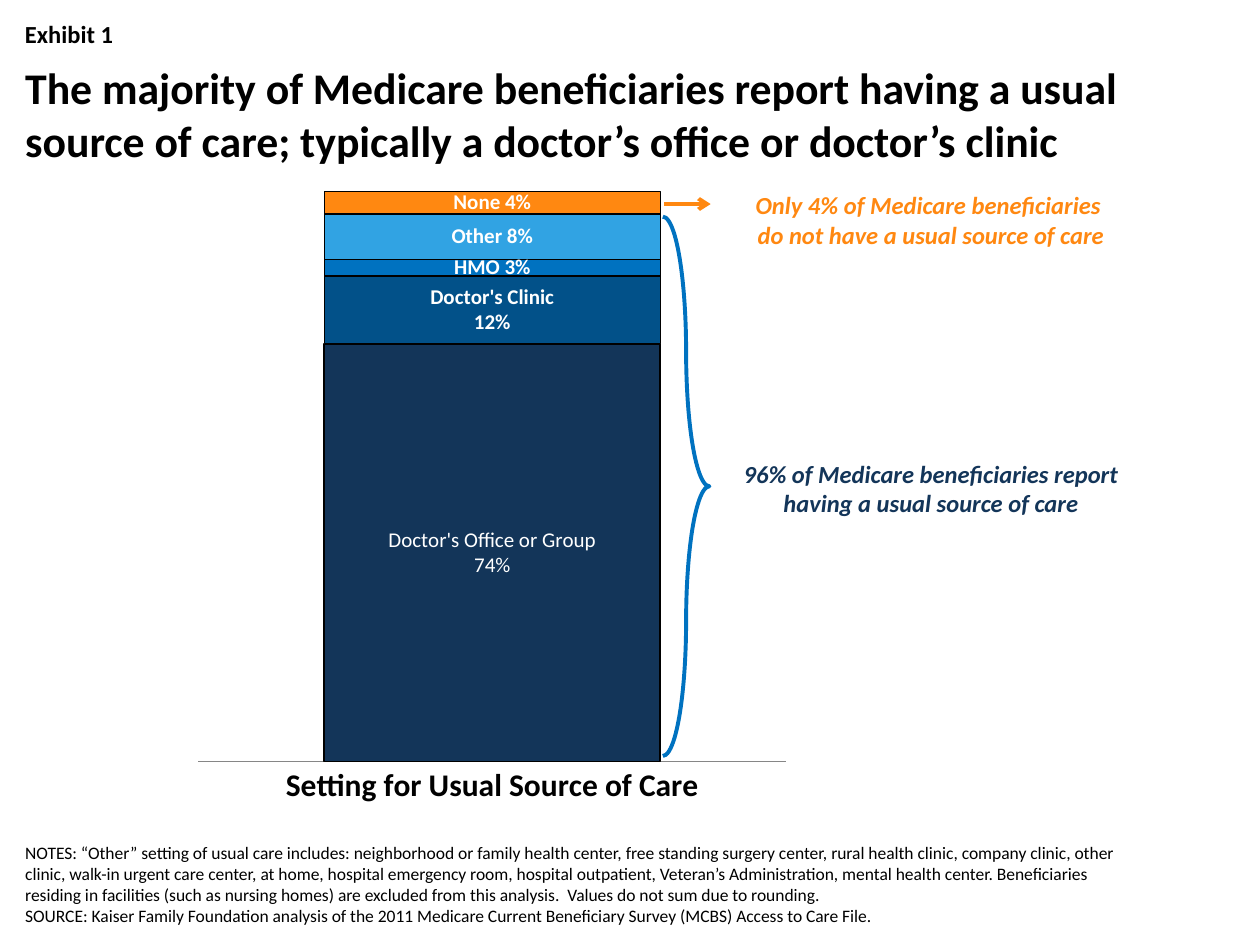
from lxml import etree
from pptx import Presentation
from pptx.chart.data import CategoryChartData
from pptx.dml.color import RGBColor
from pptx.enum.chart import XL_CHART_TYPE, XL_LABEL_POSITION, XL_TICK_MARK
from pptx.enum.shapes import MSO_CONNECTOR, MSO_SHAPE
from pptx.enum.text import MSO_ANCHOR, MSO_AUTO_SIZE, PP_ALIGN
from pptx.oxml import parse_xml
from pptx.oxml.ns import nsdecls, qn
from pptx.util import Pt

STACKED = XL_CHART_TYPE.COLUMN_STACKED_100
LABEL_CENTER = XL_LABEL_POSITION.CENTER
NO_TICK = XL_TICK_MARK.NONE
STRAIGHT = MSO_CONNECTOR.STRAIGHT
BRACE = MSO_SHAPE.RIGHT_BRACE
TOP, MIDDLE, BOTTOM = MSO_ANCHOR.TOP, MSO_ANCHOR.MIDDLE, MSO_ANCHOR.BOTTOM
LEFT, CENTER = PP_ALIGN.LEFT, PP_ALIGN.CENTER
NO_FIT = MSO_AUTO_SIZE.NONE

FONT = "Calibri"
BLACK, WHITE, GREY = "000000", "FFFFFF", "868686"
NAVY, BLUE, ORANGE = "133559", "0072C0", "FF8811"
SETTINGS = [
    ("Doctor's Office", 0.74, NAVY, 1, "\n"),
    ("Doctor's Clinic", 0.12, "025189", 0.75, "\n"),
    ("HMO", 0.03, BLUE, 0.75, " "),
    ("Other", 0.08, "31A3E3", 0.75, " "),
    ("None", 0.04, ORANGE, 0.75, " "),
]
TITLE = ("The majority of Medicare beneficiaries report having a usual source of care; "
         "typically a doctor’s office or doctor’s clinic")
NOTES = [
    "NOTES: “Other” setting of usual care includes: neighborhood or family health center, "
    "free standing surgery center, rural health clinic, company clinic, other clinic, walk-in "
    "urgent care center, at home, hospital emergency room, hospital outpatient, Veteran’s "
    "Administration, mental health center. Beneficiaries residing in facilities (such as nursing "
    "homes) are excluded from this analysis.  Values do not sum due to rounding.",
    "SOURCE: Kaiser Family Foundation analysis of the 2011 Medicare Current Beneficiary Survey "
    "(MCBS) Access to Care File.",
]


def color(value):
    """Turn a hex string into a colour."""
    return RGBColor.from_string(value)


def style(font, size, shade, bold=False, italic=False):
    """Set the face, size, colour and weight of a font."""
    font.name, font.size = FONT, Pt(size)
    font.bold, font.italic = bold, italic
    font.color.rgb = color(shade)


def place(shape, box):
    """Move a shape to a box given in points."""
    shape.left, shape.top, shape.width, shape.height = map(Pt, box)


def write(shape, lines, size, shade, bold=False, italic=False, align=LEFT, anchor=TOP):
    """Fill a shape with one paragraph for each line."""
    frame = shape.text_frame
    frame.word_wrap, frame.auto_size = True, NO_FIT
    frame.vertical_anchor = anchor
    for index, line in enumerate(lines):
        para = frame.add_paragraph() if index else frame.paragraphs[0]
        para.alignment, para.space_before = align, Pt(0)
        span = para.add_run()
        span.text = line
        style(span.font, size, shade, bold, italic)


def add_text(page, box, lines, size, shade, **look):
    """Add a text box."""
    write(page.shapes.add_textbox(*map(Pt, box)), lines, size, shade, **look)


def add_heading(page, box):
    """Place the exhibit number above the title."""
    left, top, width, height = box
    add_text(page, (left, top, width, 25), ["Exhibit 1"], 14, BLACK, bold=True)
    title = page.shapes.title
    place(title, (left, top + 21.6, width, height - 21.6))
    write(title, [TITLE], 25, BLACK, bold=True, anchor=MIDDLE)


def add_notes(page, box):
    """Place the notes and source in the body placeholder, without bullets."""
    body = page.placeholders[1]
    place(body, box)
    write(body, NOTES, 10, BLACK, anchor=BOTTOM)
    for para in body.text_frame.paragraphs:
        props = para._p.get_or_add_pPr()
        props.set("marL", "0")
        props.set("indent", "0")
        etree.SubElement(props, qn("a:buNone"))


def style_series(series, shade, line_width, separator):
    """Colour one segment of the column and label it with name and value."""
    series.format.fill.solid()
    series.format.fill.fore_color.rgb = color(shade)
    series.format.line.color.rgb = color(BLACK)
    series.format.line.width = Pt(line_width)
    labels = series.data_labels
    labels.show_value = labels.show_series_name = True
    labels.number_format, labels.number_format_is_linked = "0%", False
    labels.position = LABEL_CENTER
    style(labels.font, 12, WHITE, bold=True)
    mark = etree.Element(qn("c:separator"))
    mark.text = separator
    labels._element.find(qn("c:showBubbleSize")).addnext(mark)


def add_column(page, box):
    """Add the stacked column of care settings."""
    data = CategoryChartData(number_format="0%")
    data.categories = ["Setting for Usual Source of Care"]
    for name, share, *_ in SETTINGS:
        data.add_series(name, [share])
    chart = page.shapes.add_chart(STACKED, *map(Pt, box), data).chart
    chart.has_legend = chart.has_title = False
    style(chart.font, 18, BLACK)
    plot = chart.plots[0]
    plot.gap_width, plot.overlap, plot.vary_by_categories = 75, 100, False
    for series, (_, _, shade, line_width, separator) in zip(plot.series, SETTINGS):
        style_series(series, shade, line_width, separator)
    office = plot.series[0].points[0].data_label
    frame = office.text_frame
    for index, line in enumerate(["Doctor's Office or Group", "74%"]):
        para = frame.add_paragraph() if index else frame.paragraphs[0]
        span = para.add_run()
        span.text = line
        style(span.font, 12, WHITE)
    office.position = LABEL_CENTER
    chart.value_axis.has_major_gridlines = False
    chart.value_axis.maximum_scale = 1
    chart.value_axis.visible = False
    axis = chart.category_axis
    axis.major_tick_mark = axis.minor_tick_mark = NO_TICK
    axis.format.line.color.rgb = color(GREY)
    style(axis.tick_labels.font, 18, BLACK, bold=True)
    area = chart._chartSpace.chart.plotArea
    for old in area.findall(qn("c:layout")):
        area.remove(old)
    area.insert(0, parse_xml(
        f'<c:layout {nsdecls("c")}><c:manualLayout><c:layoutTarget val="inner"/>'
        '<c:xMode val="edge"/><c:yMode val="edge"/><c:x val="0.271"/><c:y val="0.029"/>'
        '<c:w val="0.476"/><c:h val="0.87"/></c:manualLayout></c:layout>'))


def add_callouts(page, box):
    """Add the arrow and brace beside the column, with their remarks."""
    left, top, width, height = box
    text_left, text_width = left + 27.3, width - 27.3
    add_text(page, (text_left, top, text_width, 41),
             ["Only 4% of Medicare beneficiaries ", "do not have a usual source of care"],
             14, ORANGE, bold=True, italic=True, align=CENTER)
    add_text(page, (text_left, top + 153.4, text_width, 41),
             ["96% of Medicare beneficiaries report having a usual source of care"],
             14, NAVY, bold=True, italic=True, align=CENTER)
    level = top + 11.5
    arrow = page.shapes.add_connector(
        STRAIGHT, Pt(left + 0.7), Pt(level), Pt(text_left), Pt(level))
    arrow.line.color.rgb, arrow.line.width = color(ORANGE), Pt(2.25)
    etree.SubElement(arrow.line._get_or_add_ln(), qn("a:tailEnd"), type="arrow")
    etree.SubElement(arrow._element.spPr, qn("a:effectLst"))
    brace = page.shapes.add_shape(
        BRACE, Pt(left), Pt(top + 18.7), Pt(26.6), Pt(height - 18.7))
    brace.adjustments[0], brace.adjustments[1] = 3.12, 0.5
    brace.shadow.inherit = False
    brace.fill.background()
    brace.line.color.rgb, brace.line.width = color(BLUE), Pt(2.25)


def main():
    """Build the exhibit and save it."""
    deck = Presentation()
    deck.slide_width, deck.slide_height = Pt(720), Pt(540)
    page = deck.slides.add_slide(deck.slide_layouts[1])
    add_heading(page, (7.2, 7.2, 705.6, 93.6))
    add_column(page, (-77.8, 98.6, 705.6, 374.4))
    add_notes(page, (7.2, 489.6, 655.2, 43.2))
    add_callouts(page, (378.8, 105.1, 279.3, 326.9))
    deck.save("out.pptx")


if __name__ == "__main__":
    main()
